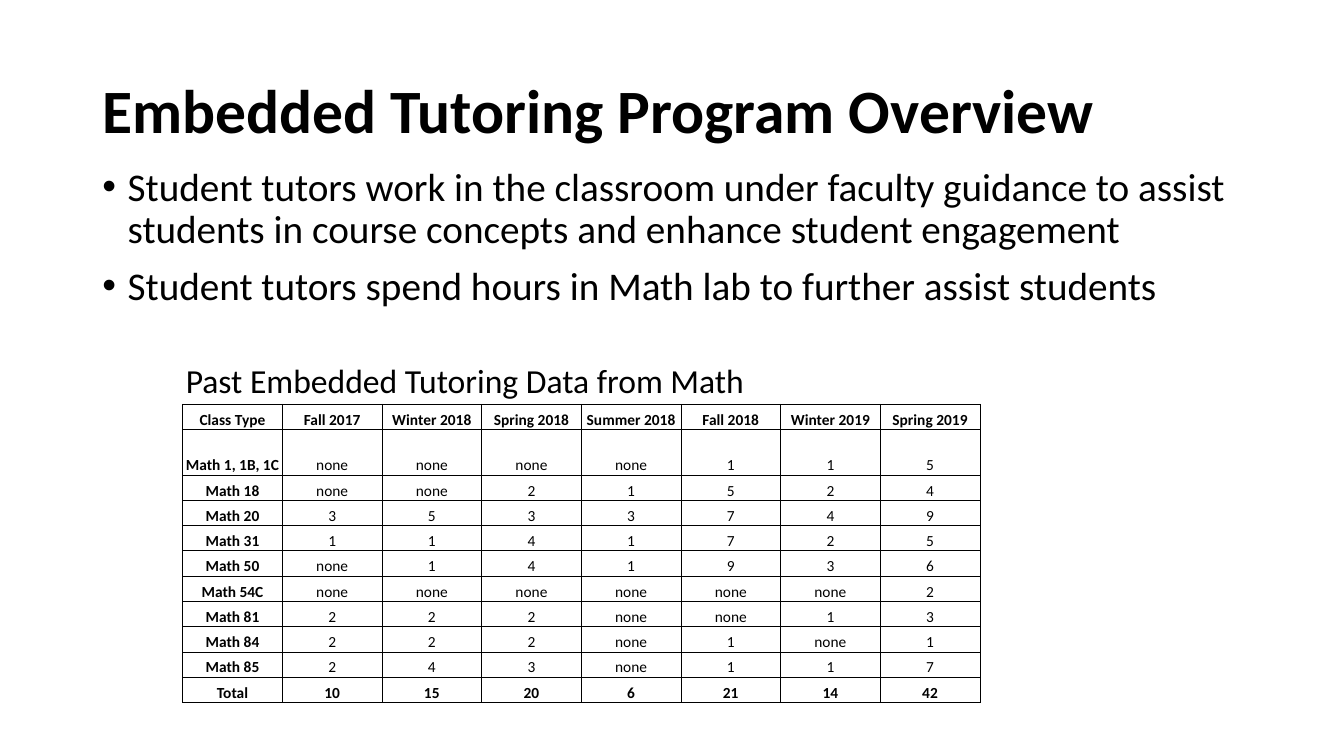
from lxml.etree import SubElement
from pptx import Presentation
from pptx.dml.color import RGBColor
from pptx.enum.text import MSO_ANCHOR, MSO_AUTO_SIZE, PP_ALIGN
from pptx.oxml.ns import qn
from pptx.util import Pt

BLACK = RGBColor(0x00, 0x00, 0x00)
FONT = "Calibri"
ROW_HEIGHT = 18.07
TALL_ROW_HEIGHT = 32.4
COLUMN_WIDTH = 71.2

TERMS = ["Class Type", "Fall 2017", "Winter 2018", "Spring 2018",
         "Summer 2018", "Fall 2018", "Winter 2019", "Spring 2019"]
TUTOR_COUNTS = [
    ["Math 1, 1B, 1C", "none", "none", "none", "none", "1", "1", "5"],
    ["Math 18", "none", "none", "2", "1", "5", "2", "4"],
    ["Math 20", "3", "5", "3", "3", "7", "4", "9"],
    ["Math 31", "1", "1", "4", "1", "7", "2", "5"],
    ["Math 50", "none", "1", "4", "1", "9", "3", "6"],
    ["Math 54C", "none", "none", "none", "none", "none", "none", "2"],
    ["Math 81", "2", "2", "2", "none", "none", "1", "3"],
    ["Math 84", "2", "2", "2", "none", "1", "none", "1"],
    ["Math 85", "2", "4", "3", "none", "1", "1", "7"],
]
TOTALS = ["Total", "10", "15", "20", "6", "21", "14", "42"]


def write(paragraph, text, size, bold=False):
    paragraph.text = text
    font = paragraph.runs[0].font
    font.name = FONT
    font.size = Pt(size)
    font.bold = bold
    font.color.rgb = BLACK


def add_borders(cell):
    properties = cell._tc.get_or_add_tcPr()
    for side in ("a:lnL", "a:lnR", "a:lnT", "a:lnB"):
        line = SubElement(properties, qn(side), w=str(Pt(0.5)))
        fill = SubElement(line, qn("a:solidFill"))
        SubElement(fill, qn("a:srgbClr"), val=str(BLACK))


presentation = Presentation()
presentation.slide_width = Pt(960)
presentation.slide_height = Pt(540)
slide = presentation.slides.add_slide(presentation.slide_layouts[1])

heading = slide.shapes.title
heading.left, heading.top, heading.width, heading.height = Pt(66), Pt(28.75), Pt(828), Pt(104.4)
heading.text_frame.vertical_anchor = MSO_ANCHOR.MIDDLE
heading.text_frame.auto_size = MSO_AUTO_SIZE.NONE
heading_line = heading.text_frame.paragraphs[0]
write(heading_line, "Embedded Tutoring Program Overview", 44, bold=True)
heading_line.alignment = PP_ALIGN.LEFT
heading_line.line_spacing = 0.9

overview = slide.placeholders[1]
overview.left, overview.top, overview.width, overview.height = Pt(66), Pt(116), Pt(828), Pt(395.3)
overview.text_frame.auto_size = MSO_AUTO_SIZE.NONE
overview.text_frame.text = "\n".join([
    "Student tutors work in the classroom under faculty guidance to assist "
    "students in course concepts and enhance student engagement",
    "Student tutors spend hours in Math lab to further assist students",
    "Past Embedded Tutoring Data from Math",
])
*duties, table_caption = overview.text_frame.paragraphs
for duty in duties:
    write(duty, duty.text, 28)
    duty.line_spacing = 0.9
    duty.space_before = Pt(10)
    indents = duty._p.get_or_add_pPr()
    indents.set("marL", str(Pt(18)))
    indents.set("indent", str(Pt(-18)))

write(table_caption, table_caption.text, 24)
table_caption.line_spacing = 0.9
table_caption.space_before = Pt(40)
caption_indents = table_caption._p.get_or_add_pPr()
caption_indents.set("marL", str(Pt(59.5)))
caption_indents.set("indent", "0")
SubElement(caption_indents, qn("a:buNone"))

rows = [TERMS, *TUTOR_COUNTS, TOTALS]
row_heights = [ROW_HEIGHT, TALL_ROW_HEIGHT] + [ROW_HEIGHT] * (len(rows) - 2)
tutoring_data = slide.shapes.add_table(
    len(rows), len(TERMS), Pt(130.5), Pt(288.8),
    Pt(COLUMN_WIDTH * len(TERMS)), Pt(sum(row_heights))).table
tutoring_data.first_row = False
tutoring_data.horz_banding = False
for column in tutoring_data.columns:
    column.width = Pt(COLUMN_WIDTH)

for row_index, (values, height) in enumerate(zip(rows, row_heights)):
    tutoring_data.rows[row_index].height = Pt(height)
    for column_index, value in enumerate(values):
        cell = tutoring_data.cell(row_index, column_index)
        cell.margin_left = cell.margin_right = cell.margin_top = Pt(0.7)
        cell.margin_bottom = 0
        cell.vertical_anchor = MSO_ANCHOR.BOTTOM
        entry = cell.text_frame.paragraphs[0]
        write(entry, value, 11, bold=column_index == 0 or values in (TERMS, TOTALS))
        entry.alignment = PP_ALIGN.CENTER
        add_borders(cell)
        cell.fill.background()

presentation.save("out.pptx")
